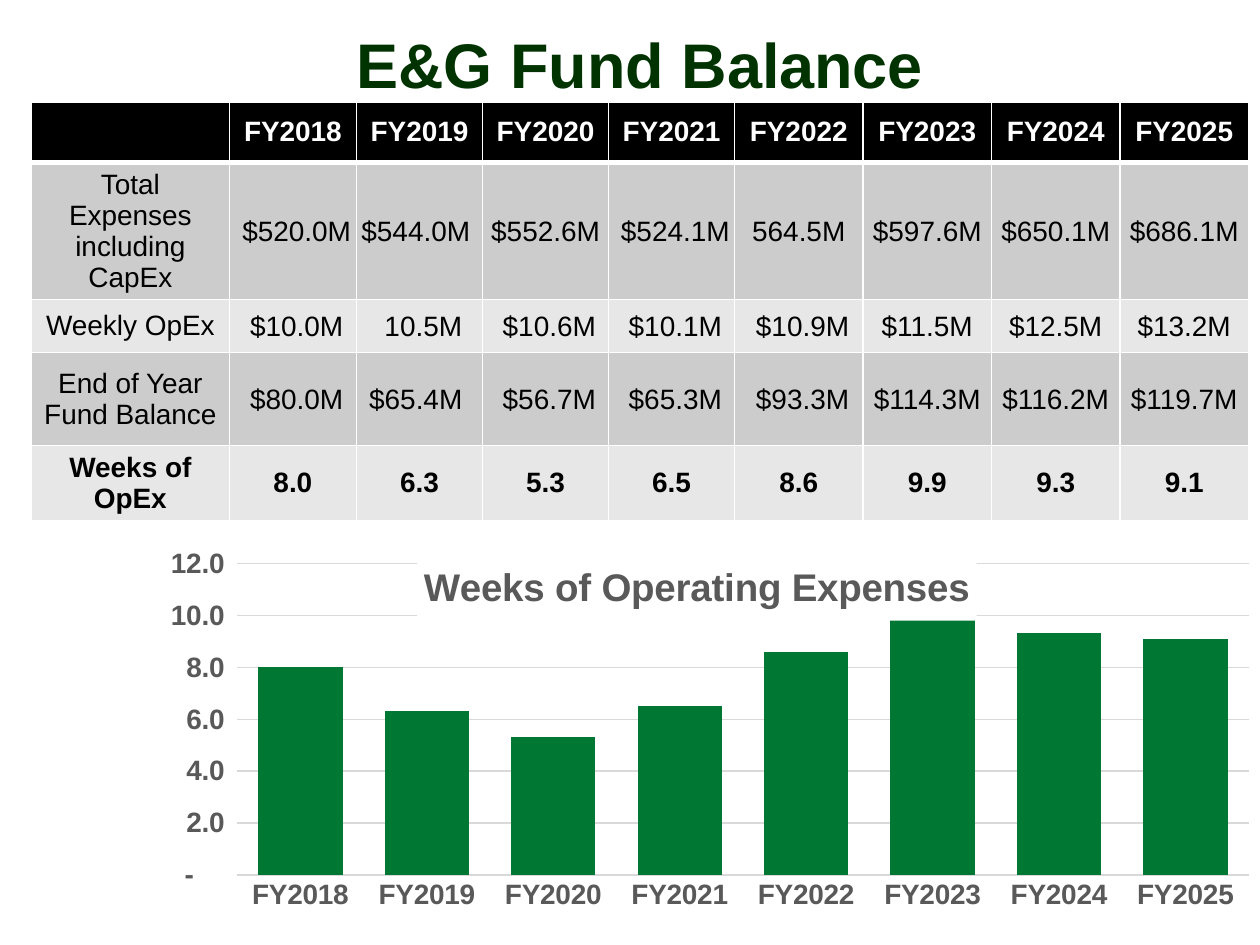
from lxml import etree
from pptx import Presentation
from pptx.chart.data import CategoryChartData
from pptx.dml.color import RGBColor
from pptx.enum.chart import XL_CHART_TYPE as ChartType, XL_TICK_MARK as TickMark
from pptx.enum.text import MSO_ANCHOR as Anchor, PP_ALIGN as Align
from pptx.oxml import parse_xml
from pptx.oxml.ns import nsdecls, qn
from pptx.util import Inches, Pt

COLORS = {
    "title": "003300", "black": "000000", "white": "FFFFFF",
    "dark_band": "CCCCCC", "light_band": "E7E7E7",
    "bar": "007833", "label": "595959", "grid": "D9D9D9",
}
YEARS = [f"FY{year}" for year in range(2018, 2026)]
WEEKS = [8.0, 6.3, 5.3, 6.5, 8.6, 9.9, 9.3, 9.1]
# A space before or after an amount marks a slight shift to the right or left
ROWS = [
    ["", *YEARS],
    ["Total Expenses\nincluding CapEx", " $520.0M", "$544.0M ", "$552.6M", " $524.1M",
     "564.5M", "$597.6M", "$650.1M", "$686.1M"],
    ["Weekly OpEx", " $10.0M", " 10.5M", " $10.6M", " $10.1M",
     " $10.9M", "$11.5M", "$12.5M", "$13.2M"],
    ["End of Year Fund Balance", " $80.0M", "$65.4M ", " $56.7M", " $65.3M",
     " $93.3M", "$114.3M", "$116.2M", "$119.7M"],
    ["Weeks of OpEx", *[f"{value:.1f}" for value in WEEKS]],
]


def style_font(font, size, color):
    for name, value in {"name": "Arial", "size": Pt(size), "bold": True}.items():
        setattr(font, name, value)
    font.color.rgb = RGBColor.from_string(COLORS[color])


def place_chart_part(element, **settings):
    """Give the plot area or the chart title a manual layout."""
    old = element.find(qn("c:layout"))
    position = 0 if old is None else element.index(old)
    if old is not None:
        element.remove(old)
    fields = "".join(f'<c:{name} val="{value}"/>' for name, value in settings.items())
    element.insert(position, parse_xml(
        f'<c:layout {nsdecls("c")}><c:manualLayout>{fields}</c:manualLayout></c:layout>'))


deck = Presentation()
deck.slide_width, deck.slide_height = Inches(10), Inches(7.5)
page = deck.slides.add_slide(deck.slide_layouts[5])

# Title
title = page.shapes.title
title.left, title.top, title.width, title.height = map(Inches, (0.58, 0.17, 9, 0.67))
title.text_frame.text = "E&G Fund Balance"
title.text_frame.vertical_anchor = Anchor.MIDDLE
para = title.text_frame.paragraphs[0]
para.alignment = Align.CENTER
style_font(para.runs[0].font, 36, "title")

# Column chart
data = CategoryChartData()
data.categories = YEARS
data.add_series("Series 1", WEEKS)
chart = page.shapes.add_chart(
    ChartType.COLUMN_CLUSTERED, Inches(1.08), Inches(4.25), Inches(8.92), Inches(3.17), data).chart
chart.has_legend = False
plot = chart.plots[0]
plot.gap_width, plot.overlap, plot.vary_by_categories = 50, -27, False
bars = plot.series[0].format.fill
bars.solid()
bars.fore_color.rgb = RGBColor.from_string(COLORS["bar"])
place_chart_part(chart.element.find(".//" + qn("c:plotArea")),
                 layoutTarget="inner", xMode="edge", yMode="edge",
                 x=0.09, y=0.07, w=0.9, h=0.78)

# Chart title, laid over the plot on white
chart.has_title = True
heading = chart.chart_title
heading.text_frame.text = "Weeks of Operating Expenses"
style_font(heading.text_frame.paragraphs[0].runs[0].font, 22, "label")
heading.format.fill.solid()
heading.format.fill.fore_color.rgb = RGBColor.from_string(COLORS["white"])
heading_element = chart.element.find(".//" + qn("c:title"))
place_chart_part(heading_element, xMode="edge", yMode="edge", x=0.25, y=0.05)
heading_element.find(qn("c:overlay")).set("val", "1")

# Chart axes
years_axis, weeks_axis = chart.category_axis, chart.value_axis
for axis in (years_axis, weeks_axis):
    axis.major_tick_mark = axis.minor_tick_mark = TickMark.NONE
    style_font(axis.tick_labels.font, 16, "label")
weeks_axis.minimum_scale, weeks_axis.maximum_scale, weeks_axis.major_unit = 0, 12, 2
weeks_axis.tick_labels.number_format = '_(* #,##0.0_);_(* \\(#,##0.0\\);_(* "-"??_);_(@_)'
weeks_axis.tick_labels.number_format_is_linked = False
weeks_axis.format.line.fill.background()
for line in (years_axis.format.line, weeks_axis.major_gridlines.format.line):
    line.width = Pt(0.75)
    line.color.rgb = RGBColor.from_string(COLORS["grid"])

# Fund balance table
table = page.shapes.add_table(
    len(ROWS), len(ROWS[0]), Inches(0.25), Inches(0.81), Inches(9.67), Inches(2.91)).table
for column, width in zip(table.columns, [1.57, 1.01] + [1] * 3 + [1.02] * 4):
    column.width = Inches(width)
for row, height in zip(table.rows, [0.48, 0.74, 0.42, 0.74, 0.53]):
    row.height = Inches(height)

for r, texts in enumerate(ROWS):
    band = "black" if r == 0 else "dark_band" if r % 2 else "light_band"
    for c, text in enumerate(texts):
        cell = table.cell(r, c)
        cell.text = text.strip()
        cell.vertical_anchor = Anchor.MIDDLE
        if c and r in (1, 2, 3):
            cell.margin_left = Inches(0.07 if text.startswith(" ") else 0.01)
            cell.margin_right = Inches(0.07 if text.endswith(" ") else 0.01)
            cell.margin_top, cell.margin_bottom = Inches(0.01), 0
        for para in cell.text_frame.paragraphs:
            para.alignment = Align.CENTER
            for span in para.runs:
                style_font(span.font, 16, "black" if r else "white")
                span.font.bold = r in (0, len(ROWS) - 1)

        # White borders, thicker below the header
        properties = cell._tc.get_or_add_tcPr()
        for side in "LRTB":
            thick = (r, side) in ((0, "B"), (1, "T"))
            border = etree.SubElement(properties, qn(f"a:ln{side}"), w=str(Pt(3 if thick else 1)))
            fill = etree.SubElement(border, qn("a:solidFill"))
            etree.SubElement(fill, qn("a:srgbClr"), val=COLORS["white"])
        cell.fill.solid()
        cell.fill.fore_color.rgb = RGBColor.from_string(COLORS[band])

deck.save("out.pptx")
